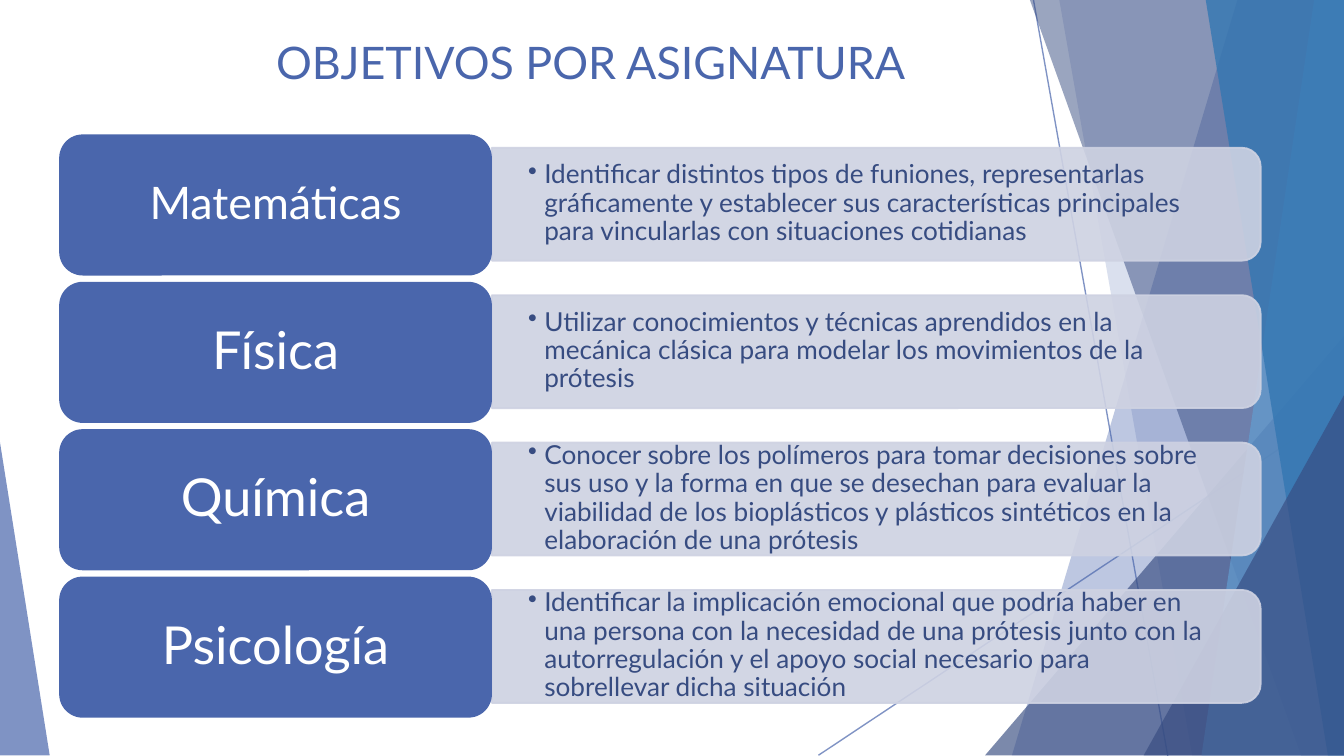
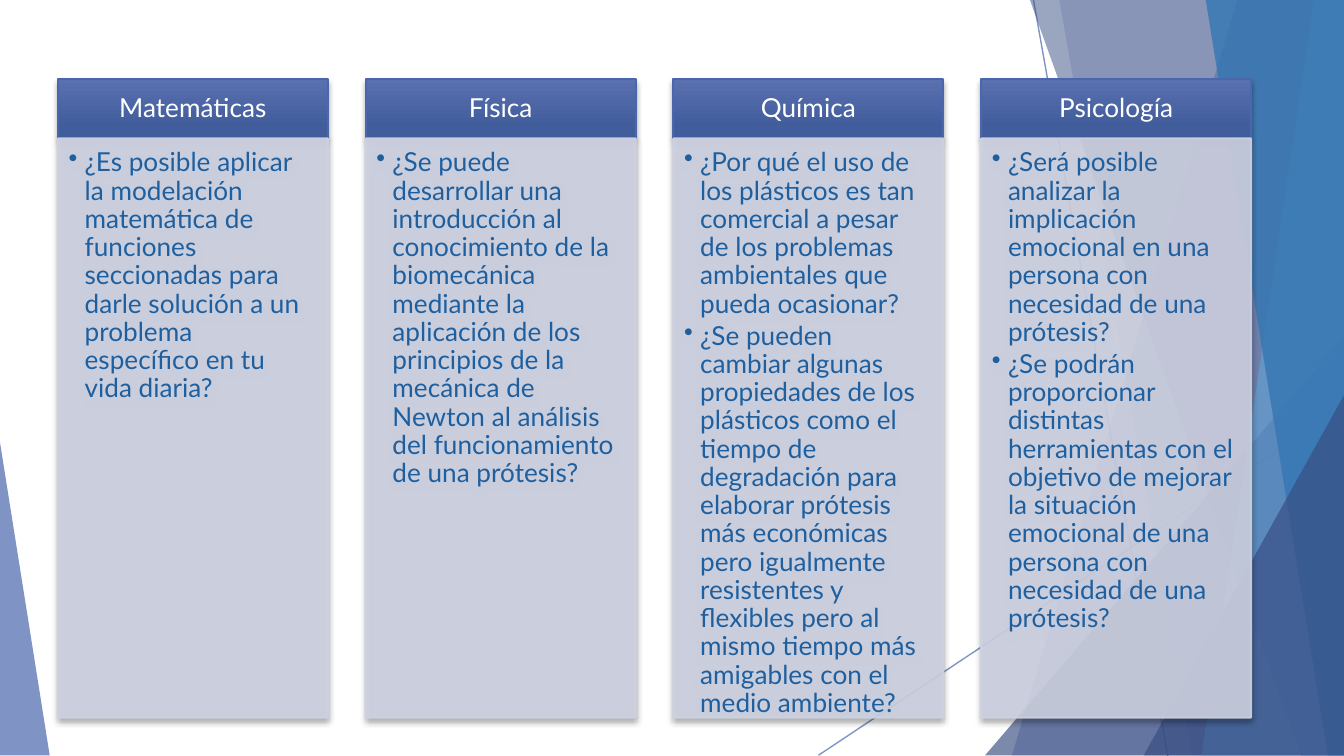
from lxml.etree import SubElement
from pptx import Presentation
from pptx.dml.color import RGBColor
from pptx.enum.shapes import MSO_CONNECTOR, MSO_SHAPE
from pptx.enum.text import MSO_ANCHOR, PP_ALIGN
from pptx.oxml.ns import qn
from pptx.util import Inches, Pt

FONT = "Lato"
BLUE = RGBColor(0x4A, 0x66, 0xAC)
NAVY = RGBColor(0x37, 0x4C, 0x81)
SKY = RGBColor(0x62, 0x9D, 0xD1)
OCEAN = RGBColor(0x34, 0x77, 0xB2)
QUESTION_BLUE = RGBColor(0x1E, 0x5F, 0x9F)
PALE = RGBColor(0xCE, 0xD2, 0xE2)
HEADER_TOP = RGBColor(0x5A, 0x70, 0xB0)
HEADER_BOTTOM = RGBColor(0x42, 0x5D, 0x9C)
WHITE = RGBColor(0xFF, 0xFF, 0xFF)
BLACK = RGBColor(0, 0, 0)

RAYS = [(7.69, 0, 8.69, 5.63), (10, 3.02, 6.09, 5.62)]
FACETS = [
    ("wedge", (9.21, 7.53), BLUE, 36),
    ("wedge", (7.88, 8.87), BLUE, 20),
    ("triangle", (7.33, 2.5, 2.67, 3.12, 1), NAVY, 66),
    ("wedge", (7.66, 9.68), NAVY, 50),
    ("wedge", (9.78, 8.94), SKY, 70),
    ("wedge", (8.97, 9.88), OCEAN, 80),
    ("triangle", (8.51, 2.94, 1.49, 2.68, 1), NAVY, 66),
    ("triangle", (0, 3.29, 0.37, 2.33, 0), BLUE, 70),
]

OBJECTIVES = [
    ("Matemáticas", 24, "Identificar distintos tipos de funiones, representarlas gráficamente y establecer sus características principales para vincularlas con situaciones cotidianas"),
    ("Física", 28, "Utilizar conocimientos y técnicas aprendidos en la mecánica clásica para modelar los movimientos de la prótesis"),
    ("Química", 28, "Conocer sobre los polímeros para tomar decisiones sobre sus uso y la forma en que se desechan para evaluar la viabilidad de los bioplásticos y plásticos sintéticos en la elaboración de una prótesis"),
    ("Psicología", 28, "Identificar la implicación emocional que podría haber en una persona con la necesidad de una prótesis junto con la autorregulación y el apoyo social necesario para sobrellevar dicha situación"),
]

QUESTIONS = [
    ("Matemáticas", ["¿Es posible aplicar la modelación matemática de funciones seccionadas para darle solución a un problema específico en tu vida diaria?"]),
    ("Física", ["¿Se puede desarrollar una introducción al conocimiento de la biomecánica mediante la aplicación de los principios de la mecánica de Newton al análisis del funcionamiento de una prótesis?"]),
    ("Química", [
        "¿Por qué el uso de los plásticos es tan comercial a pesar de los problemas ambientales que pueda ocasionar?",
        "¿Se pueden cambiar algunas propiedades de los plásticos como el tiempo de degradación para elaborar prótesis más económicas pero igualmente resistentes y flexibles pero al mismo tiempo más amigables con el medio ambiente?",
    ]),
    ("Psicología", [
        "¿Será posible analizar la implicación emocional en una persona con necesidad de una prótesis?",
        "¿Se podrán proporcionar distintas herramientas con el objetivo de mejorar la situación emocional de una persona con necesidad de una prótesis?",
    ]),
]


def paint(shape, color, opacity=100, outlined=False):
    shape.shadow.inherit = False
    shape.fill.solid()
    shape.fill.fore_color.rgb = color
    if outlined:
        shape.line.color.rgb = color
        shape.line.width = Pt(1)
    else:
        shape.line.fill.background()
    if opacity < 100:
        for tint in shape._element.spPr.iter(qn("a:srgbClr")):
            SubElement(tint, qn("a:alpha"), val=str(opacity * 1000))


def write(shape, lines, size, color, margins, anchor=MSO_ANCHOR.MIDDLE, bulleted=False, spacing=0.9):
    frame = shape.text_frame
    frame.text = "\n".join(lines)
    frame.word_wrap = True
    frame.vertical_anchor = anchor
    frame.margin_left, frame.margin_top, frame.margin_right, frame.margin_bottom = map(Inches, margins)
    for order, paragraph in enumerate(frame.paragraphs):
        paragraph.alignment = PP_ALIGN.LEFT if bulleted else PP_ALIGN.CENTER
        paragraph.line_spacing = spacing
        if order:
            paragraph.space_before = Pt(2.1)
        if bulleted:
            paragraph.level = 1
            properties = paragraph._p.get_or_add_pPr()
            properties.set("marL", str(Inches(0.12)))
            properties.set("indent", str(Inches(-0.12)))
            bullet_color = SubElement(properties, qn("a:buClr"))
            SubElement(bullet_color, qn("a:srgbClr"), val=str(color))
            SubElement(properties, qn("a:buChar"), char="•")
        for run in paragraph.runs:
            run.font.name = FONT
            run.font.size = Pt(size)
            run.font.color.rgb = color


deck = Presentation()
deck.slide_width = Inches(10)
deck.slide_height = deck.slide_width * 9 // 16
objectives_slide, questions_slide = [deck.slides.add_slide(deck.slide_layouts[6]) for _ in range(2)]

for slide in (objectives_slide, questions_slide):
    for ends in RAYS:
        ray = slide.shapes.add_connector(MSO_CONNECTOR.STRAIGHT, *map(Inches, ends))
        ray.line.color.rgb = BLUE
        ray.line.width = Pt(0.75)
        for tint in ray._element.spPr.iter(qn("a:srgbClr")):
            SubElement(tint, qn("a:alpha"), val="70000")
        SubElement(ray._element.spPr, qn("a:effectLst"))
    for kind, geometry, color, opacity in FACETS:
        if kind == "wedge":
            top_x, bottom_x = geometry
            outline = slide.shapes.build_freeform(Inches(top_x), Inches(-0.01))
            corners = [(10, -0.01), (10, 5.62), (bottom_x, 5.62)]
            outline.add_line_segments([(Inches(x), Inches(y)) for x, y in corners], close=True)
            facet = outline.convert_to_shape()
        else:
            *box, apex = geometry
            facet = slide.shapes.add_shape(MSO_SHAPE.ISOSCELES_TRIANGLE, *map(Inches, box))
            facet.adjustments[0] = apex
        paint(facet, color, opacity)

title = objectives_slide.shapes.add_textbox(Inches(0.94), Inches(0.16), Inches(6.91), Inches(0.69))
write(title, ["OBJETIVOS POR ASIGNATURA"], 24, BLUE, (0.1, 0.1, 0.1, 0.1), MSO_ANCHOR.TOP, spacing=1.0)

row_pitch = 3.29 / 3
bar_left, bar_length, bar_thickness = 3.66, 5.72, 0.84
for row, (subject, label_size, objective) in enumerate(OBJECTIVES):
    top = 1 + row * row_pitch
    bar = objectives_slide.shapes.add_shape(
        MSO_SHAPE.ROUND_2_SAME_RECTANGLE,
        Inches(bar_left + (bar_length - bar_thickness) / 2),
        Inches(top + 0.1 - (bar_length - bar_thickness) / 2),
        Inches(bar_thickness), Inches(bar_length))
    bar.rotation = 90
    bar.adjustments[0] = 0.167
    paint(bar, PALE, 90, outlined=True)

    goal = objectives_slide.shapes.add_textbox(Inches(bar_left), Inches(top + 0.14), Inches(5.68), Inches(0.75))
    write(goal, [objective], 14, NAVY, (0.27, 0.14, 0.27, 0.14), bulleted=True)

    label = objectives_slide.shapes.add_shape(
        MSO_SHAPE.ROUNDED_RECTANGLE, Inches(0.44), Inches(top), Inches(3.22), Inches(1.05))
    label.adjustments[0] = 0.167
    paint(label, BLUE)
    write(label, [subject], label_size, WHITE, (0.12, 0.06, 0.12, 0.06))

column_pitch = 2.29
for column, (subject, questions) in enumerate(QUESTIONS):
    left = Inches(0.43 + column * column_pitch)
    header = questions_slide.shapes.add_shape(MSO_SHAPE.RECTANGLE, left, Inches(0.59), Inches(2.01), Inches(0.44))
    paint(header, BLUE, outlined=True)
    header.fill.gradient()
    header.fill.gradient_angle = 270
    for stop, position, color in zip(header.fill.gradient_stops, (0, 0.78), (HEADER_TOP, HEADER_BOTTOM)):
        stop.position = position
        stop.color.rgb = color
    write(header, [subject], 14, WHITE, (0.11, 0.06, 0.11, 0.06))

    panel = questions_slide.shapes.add_shape(MSO_SHAPE.RECTANGLE, left, Inches(1.03), Inches(2.01), Inches(4.31))
    paint(panel, PALE, 90, outlined=True)
    write(panel, questions, 14, QUESTION_BLUE, (0.08, 0.08, 0.11, 0.12), MSO_ANCHOR.TOP, bulleted=True)

    for card in (header, panel):
        effects = card._element.spPr.find(qn("a:effectLst"))
        shadow = SubElement(effects, qn("a:outerShdw"), blurRad=str(Pt(3)), dist=str(Pt(2)),
                            dir="5400000", rotWithShape="0")
        shade = SubElement(shadow, qn("a:srgbClr"), val=str(BLACK))
        SubElement(shade, qn("a:alpha"), val="35000")

deck.save("out.pptx")
